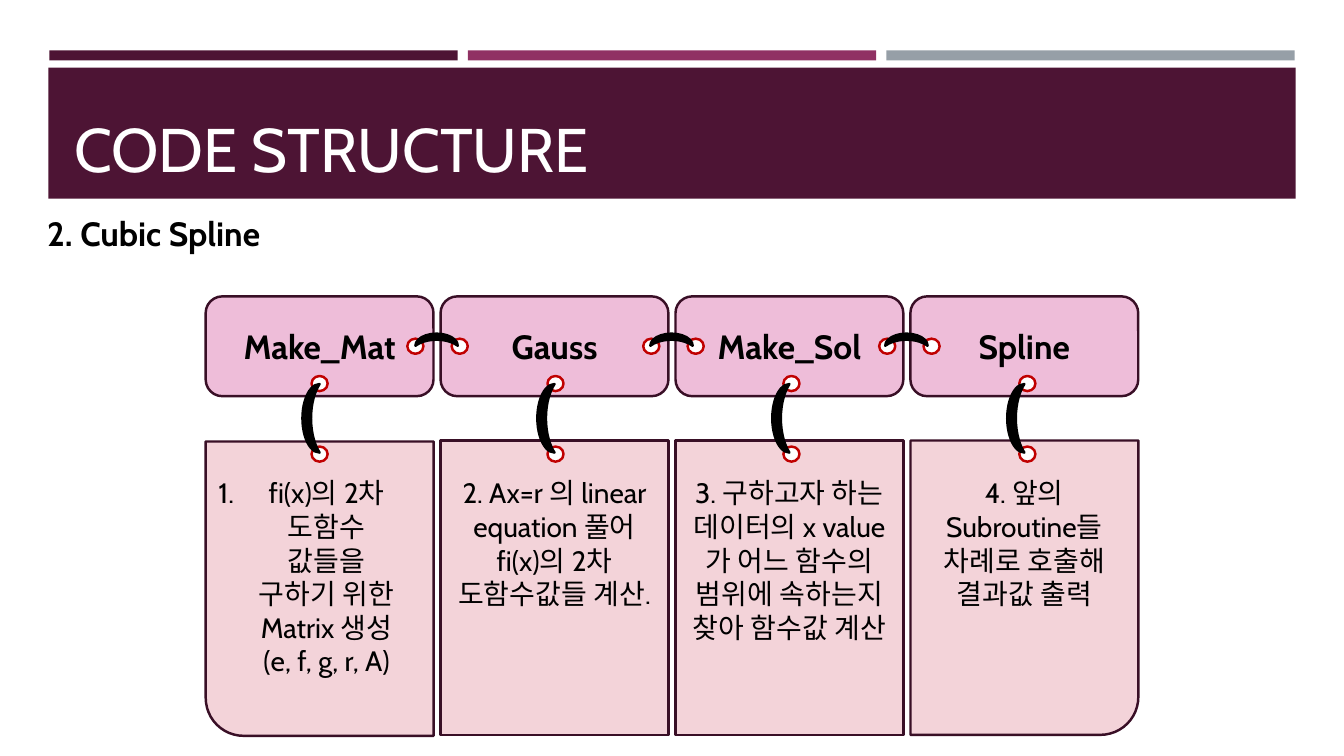
from pptx import Presentation
from pptx.dml.color import RGBColor
from pptx.enum.shapes import MSO_SHAPE
from pptx.enum.text import MSO_ANCHOR, PP_ALIGN
from pptx.util import Inches, Pt
from lxml.etree import SubElement
from pptx.oxml.ns import qn

PLUM = "4D1434"
OUTLINE = "390F26"
BLACK = "000000"
COLUMN_PITCH = 2.33
RING_PITCH = 2.34
BANDS = [(0.49, PLUM), (4.64, "903163"), (8.79, "969FA7")]
STEPS = [
    ("Make_Mat", "fi(x)의 2차 도함수 값들을 구하기 위한 Matrix 생성(e, f, g, r, A)"),
    ("Gauss", "2. Ax=r 의 linear equation 풀어 fi(x)의 2차 도함수값들 계산."),
    ("Make_Sol", "3. 구하고자 하는 데이터의 x value가 어느 함수의 범위에 속하는지 찾아 함수값 계산"),
    ("Spline", "4. 앞의 Subroutine들 차례로 호출해 결과값 출력"),
]


def color(hex_value):
    return RGBColor.from_string(hex_value)


def add_block(slide, kind, left, top, width, height, fill, line=None, rotation=0):
    block = slide.shapes.add_shape(
        kind, Inches(left), Inches(top), Inches(width), Inches(height))
    block.shadow.inherit = False
    block.rotation = rotation
    block.fill.solid()
    block.fill.fore_color.rgb = color(fill)
    if line:
        block.line.color.rgb = color(line)
        block.line.width = Pt(1.75)
    else:
        block.line.fill.background()
    return block


def write(frame, text, size, hex_value=BLACK, bold=False, align=PP_ALIGN.LEFT):
    frame.word_wrap = True
    paragraph = frame.paragraphs[0]
    paragraph.text = text
    paragraph.alignment = align
    paragraph.font.name = "Cabin"
    paragraph.font.size = Pt(size)
    paragraph.font.bold = bold
    paragraph.font.color.rgb = color(hex_value)
    return paragraph


def add_label(slide, left, top, width, height):
    label = slide.shapes.add_textbox(
        Inches(left), Inches(top), Inches(width), Inches(height))
    return label.text_frame


def number_paragraph(paragraph):
    properties = paragraph._p.get_or_add_pPr()
    properties.set("marL", str(Inches(0.5)))
    properties.set("indent", str(Inches(-0.5)))
    SubElement(properties, qn("a:buFont"), typeface="+mj-lt")
    SubElement(properties, qn("a:buAutoNum"), type="arabicPeriod")


def add_header(slide):
    for left, fill in BANDS:
        add_block(slide, MSO_SHAPE.RECTANGLE, left, 0.5, 4.05, 0.1, fill)
    add_block(slide, MSO_SHAPE.RECTANGLE, 0.48, 0.67, 12.37, 1.3, PLUM)
    title = add_label(slide, 0.64, 0.77, 12.06, 1.11)
    title.vertical_anchor = MSO_ANCHOR.BOTTOM
    write(title, "CODE STRUCTURE", 44, "FFFFFF")
    write(add_label(slide, 0.37, 2.06, 11.24, 0.5), "2. Cubic Spline", 24, bold=True)


def add_panel(slide, index, left):
    frame = (MSO_SHAPE.RECTANGLE, left, 4.37, 2.26, 2.92)
    rotation = 0
    if index == 0:
        frame = (MSO_SHAPE.ROUND_1_RECTANGLE, left, 4.38, 2.26, 2.92)
        rotation = 180
    elif index == len(STEPS) - 1:
        frame = (MSO_SHAPE.ROUND_1_RECTANGLE, left - 0.33, 4.7, 2.92, 2.26)
        rotation = 90
    add_block(slide, *frame, "F3D3D9", OUTLINE, rotation)


def add_step(slide, index, name, description):
    left = 2.04 + index * COLUMN_PITCH
    add_panel(slide, index, left)
    heading = add_block(slide, MSO_SHAPE.ROUNDED_RECTANGLE,
                        left, 2.94, 2.26, 0.99, "EEBDD9", OUTLINE).text_frame
    heading.vertical_anchor = MSO_ANCHOR.MIDDLE
    write(heading, name, 24, bold=True, align=PP_ALIGN.CENTER)

    text_left = left - 0.18 if index == 0 else left
    body = add_label(slide, text_left, 4.37, 2.26, 2.09)
    body.margin_top = Inches(0.35)
    paragraph = write(body, description, 20, align=PP_ALIGN.CENTER)
    if index == 0:
        number_paragraph(paragraph)


def add_ring(slide, left, top):
    add_block(slide, MSO_SHAPE.OVAL, left, top, 0.16, 0.15, "FFFFFF", "C00000")


def add_hook(slide, left, top, width, height, rotation=0):
    add_block(slide, MSO_SHAPE.MOON, left, top, width, height, BLACK, BLACK, rotation)


def add_bindings(slide):
    for index in range(len(STEPS)):
        shift = index * RING_PITCH
        for top in (3.73, 4.43):
            add_ring(slide, 3.09 + shift, top)
        add_hook(slide, 3 + index * COLUMN_PITCH, 3.81, 0.17, 0.68)
    for index in range(len(STEPS) - 1):
        shift = index * RING_PITCH
        for left in (4.04, 4.48):
            add_ring(slide, left + shift, 3.36)
        add_hook(slide, 4.27 + index * COLUMN_PITCH, 3.16, 0.12, 0.42, 90)


def main():
    deck = Presentation()
    deck.slide_width = Inches(13.33)
    deck.slide_height = Inches(7.5)
    slide = deck.slides.add_slide(deck.slide_layouts[6])
    add_header(slide)
    for index, (name, description) in enumerate(STEPS):
        add_step(slide, index, name, description)
    add_bindings(slide)
    deck.save("out.pptx")


if __name__ == "__main__":
    main()
